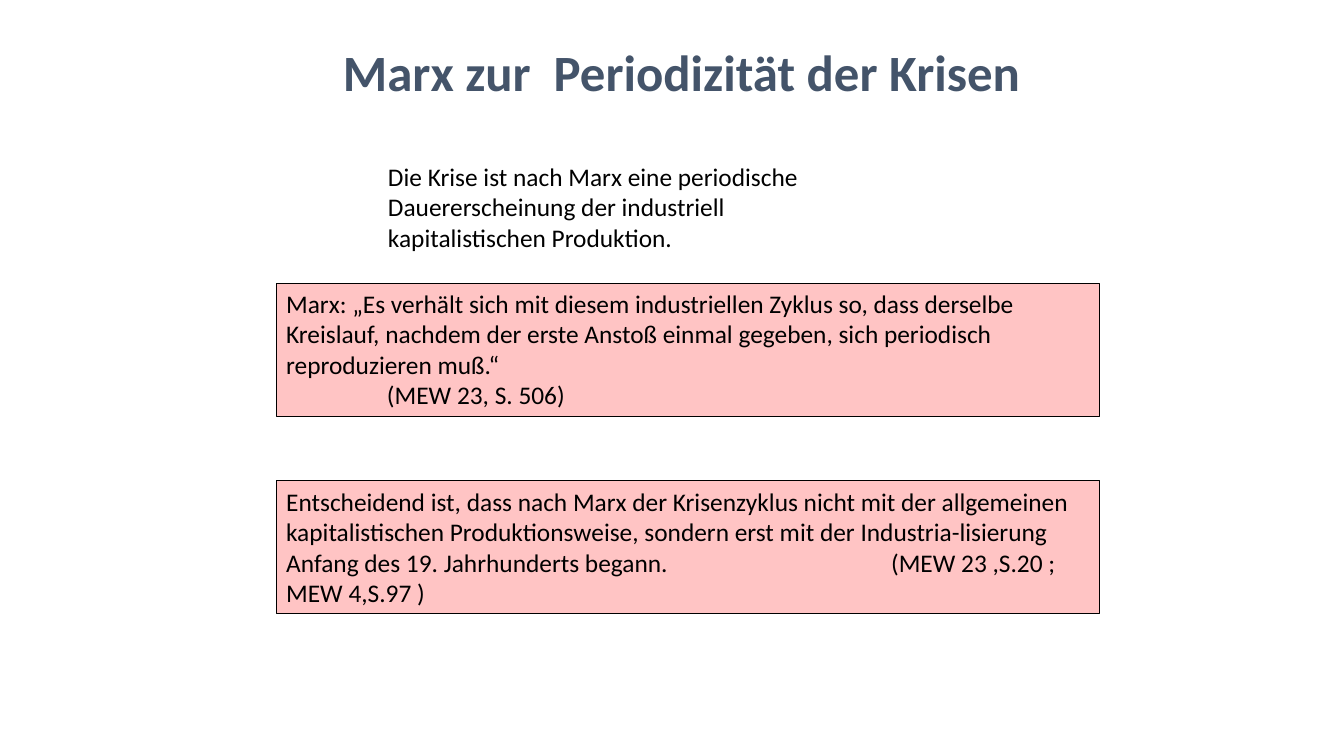
"""Build the slide on Marx and the periodicity of crises."""
from lxml.etree import SubElement
from pptx import Presentation
from pptx.dml.color import RGBColor
from pptx.enum.shapes import MSO_SHAPE
from pptx.enum.text import MSO_ANCHOR, PP_ALIGN
from pptx.oxml.ns import qn
from pptx.util import Inches, Pt

COLORS = {"title": "44546A", "text": "000000", "quote": "FF0000", "border": "000000"}
QUOTE_OPACITY = 23
TITLE_FORMAT = {"name": "Calibri", "size": Pt(36.3), "bold": True}
TEXT_FORMAT = {"name": "Calibri", "size": Pt(18.1), "bold": False}
FRAME_FORMAT = {
    "word_wrap": True,
    "vertical_anchor": MSO_ANCHOR.TOP,
    "margin_left": Inches(0.1),
    "margin_right": Inches(0.1),
    "margin_top": Inches(0.05),
    "margin_bottom": Inches(0.05),
}

TITLE = "Marx zur  Periodizität der Krisen"
TITLE_AREA = (2.17, 0.35, 9.19, 0.71)
INTRO = [
    "Die Krise ist nach Marx eine periodische Dauererscheinung der industriell "
    "kapitalistischen Produktion."
]
INTRO_AREA = (3.75, 1.55, 5, 1.02)
QUOTES = [
    {
        "tab": 1,
        "lines": [
            "Marx: „Es verhält sich mit diesem industriellen Zyklus so, dass derselbe "
            "Kreislauf, nachdem der erste Anstoß einmal gegeben, sich periodisch "
            "reproduzieren muß.“",
            "\t(MEW 23, S. 506)",
        ],
    },
    {
        "tab": 6,
        "lines": [
            "Entscheidend ist, dass nach Marx der Krisenzyklus nicht mit der allgemeinen "
            "kapitalistischen Produktionsweise, sondern erst mit der Industria-lisierung "
            "Anfang des 19. Jahrhunderts begann.\t(MEW 23 ,S.20 ; MEW 4,S.97 )"
        ],
    },
]
QUOTE_LEFT, QUOTE_TOP, QUOTE_WIDTH, QUOTE_HEIGHT = 2.74, 2.81, 8.17, 1.32
QUOTE_STEP = 1.96


def apply_format(target, values):
    """Set every given attribute on the target."""
    for name, value in values.items():
        setattr(target, name, value)


def write(box, lines, font_format, color, align=PP_ALIGN.LEFT, tab=None):
    """Fill a box with formatted paragraphs."""
    frame = box.text_frame
    apply_format(frame, FRAME_FORMAT)
    for index, line in enumerate(lines):
        para = frame.add_paragraph() if index else frame.paragraphs[0]
        para.alignment = align
        if tab and "\t" in line:
            tab_list = SubElement(para._p.get_or_add_pPr(), qn("a:tabLst"))
            SubElement(tab_list, qn("a:tab"), pos=str(Inches(tab)), algn="l")
        span = para.add_run()
        span.text = line
        apply_format(span.font, font_format)
        span.font.color.rgb = RGBColor.from_string(COLORS[color])


def add_quote(page, top, quote):
    """Draw a translucent bordered box with a quotation."""
    area = map(Inches, (QUOTE_LEFT, top, QUOTE_WIDTH, QUOTE_HEIGHT))
    box = page.shapes.add_shape(MSO_SHAPE.RECTANGLE, *area)
    box.shadow.inherit = False
    box.fill.solid()
    box.fill.fore_color.rgb = RGBColor.from_string(COLORS["quote"])
    tint = box._element.spPr.find(qn("a:solidFill")).find(qn("a:srgbClr"))
    SubElement(tint, qn("a:alpha"), val=str(QUOTE_OPACITY * 1000))
    box.line.color.rgb = RGBColor.from_string(COLORS["border"])
    box.line.width = Pt(0.75)
    write(box, quote["lines"], TEXT_FORMAT, "text", tab=quote["tab"])


def main():
    """Assemble and save the deck."""
    deck = Presentation()
    deck.slide_width, deck.slide_height = Inches(13.33), Inches(7.5)
    page = deck.slides.add_slide(deck.slide_layouts[5])

    title = page.shapes.title
    sides = ("left", "top", "width", "height")
    apply_format(title, dict(zip(sides, map(Inches, TITLE_AREA))))
    write(title, [TITLE], TITLE_FORMAT, "title", PP_ALIGN.CENTER)

    intro = page.shapes.add_textbox(*map(Inches, INTRO_AREA))
    write(intro, INTRO, TEXT_FORMAT, "text")

    for index, quote in enumerate(QUOTES):
        add_quote(page, QUOTE_TOP + index * QUOTE_STEP, quote)

    deck.save("out.pptx")


if __name__ == "__main__":
    main()
